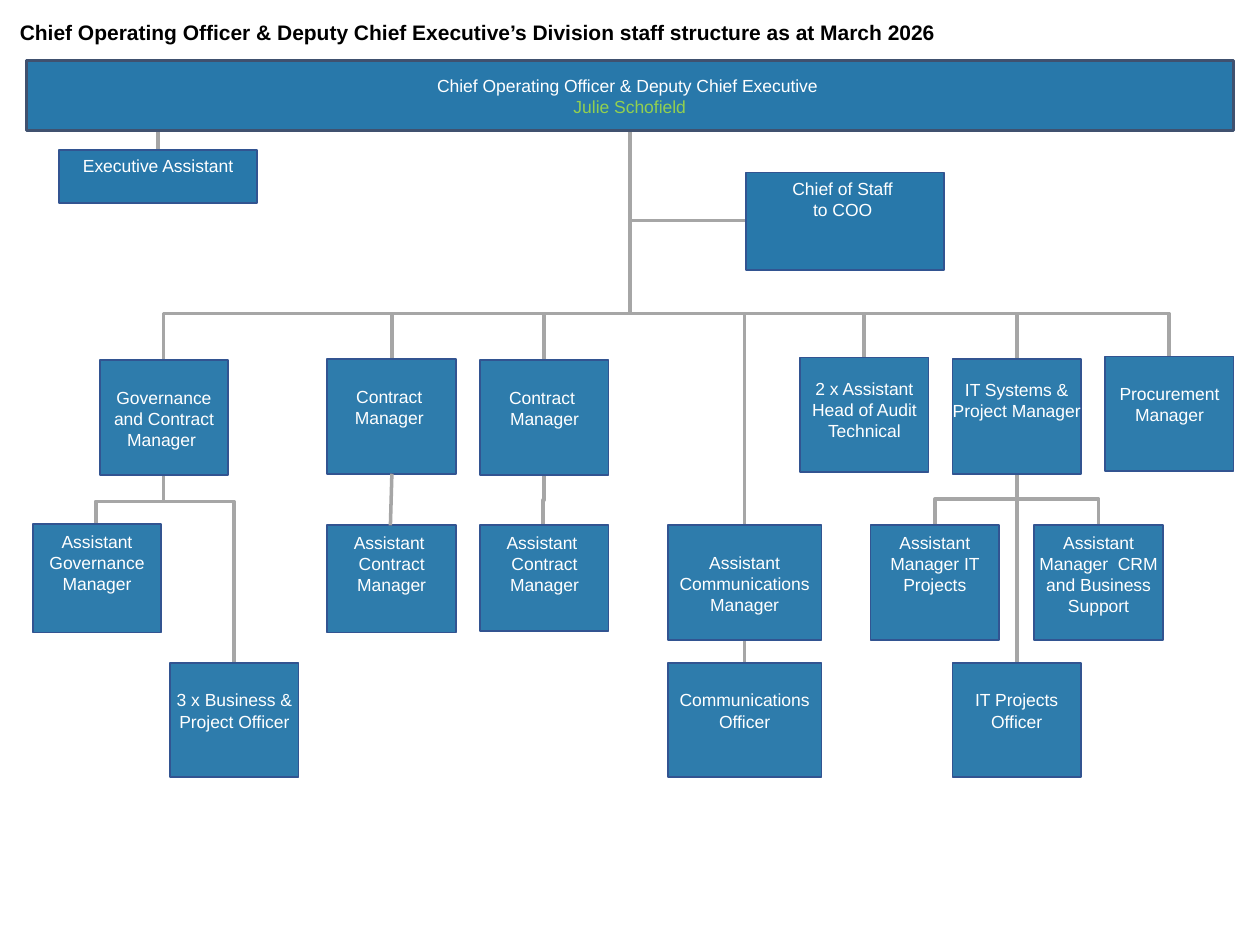
from lxml import etree
from pptx import Presentation, util as u
from pptx.dml.color import RGBColor
from pptx.enum import shapes, text
from pptx.oxml.ns import qn

BLUE = RGBColor(0x28, 0x78, 0xAA)
BOX_EDGE = RGBColor(0x32, 0x54, 0x91)
HEADER_EDGE = RGBColor(0x40, 0x51, 0x6F)
GREY = RGBColor(0xA6, 0xA6, 0xA6)
ASSISTANT_GREY = RGBColor(0xA5, 0xA5, 0xA5)
WHITE = RGBColor(0xFF, 0xFF, 0xFF)
BLACK = RGBColor(0, 0, 0)
GREEN = RGBColor(0x92, 0xD0, 0x50)

LINE_HEIGHT = 0.41
POST_W, POST_H = 2.59, 2.31
COMMS_W = 3.1
TOP = text.MSO_ANCHOR.TOP
MIDDLE = text.MSO_ANCHOR.MIDDLE


class OrgChart:
    font = "Arial"
    size = 10

    def __init__(self, slide):
        self.slide = slide

    def label(self, frame, wording, color, size, align, bold=False):
        frame.word_wrap = True
        frame.text = wording
        for paragraph in frame.paragraphs:
            paragraph.alignment = align
            for run in paragraph.runs:
                run.font.name = self.font
                run.font.size = u.Pt(size)
                run.font.bold = bold
                run.font.color.rgb = color

    def title(self, wording, left, top, width, height):
        heading = self.slide.shapes.add_textbox(*map(u.Cm, (left, top, width, height)))
        frame = heading.text_frame
        self.label(frame, wording, BLACK, 12, text.PP_ALIGN.LEFT, bold=True)
        frame.vertical_anchor = MIDDLE
        frame.paragraphs[0].line_spacing = 0.9

    def box(self, wording, left, top, width, height, inset=(0.25, 0.13), lead=0,
            edge=BOX_EDGE, weight=1, anchor=TOP, opacity=None):
        post = self.slide.shapes.add_shape(
            shapes.MSO_SHAPE.RECTANGLE, *map(u.Cm, (left, top, width, height)))
        post.shadow.inherit = False
        post.fill.solid()
        post.fill.fore_color.rgb = BLUE
        if opacity:
            color = post._element.spPr.find(qn("a:solidFill"))[0]
            etree.SubElement(color, qn("a:alpha"), val=str(opacity * 1000))
        post.line.color.rgb = edge
        post.line.width = u.Pt(weight)
        frame = post.text_frame
        frame.margin_left = frame.margin_right = u.Cm(inset[0])
        frame.margin_top = u.Cm(inset[1] + lead * LINE_HEIGHT)
        frame.margin_bottom = u.Cm(inset[1])
        frame.vertical_anchor = anchor
        self.label(frame, wording, WHITE, self.size, text.PP_ALIGN.CENTER)
        return post

    def post(self, wording, left, top, width=POST_W, height=POST_H,
             inset=(0.05, 0.13), lead=0):
        return self.box(wording, left, top, width, height, inset, lead, opacity=97)

    def connector(self, kind, start, end, color=GREY, weight=2):
        link = self.slide.shapes.add_connector(kind, *map(u.Cm, (*start, *end)))
        link.line.color.rgb = color
        link.line.width = u.Pt(weight)
        etree.SubElement(link._element.spPr, qn("a:effectLst"))
        return link

    def line(self, start, end, color=GREY, weight=2):
        self.connector(shapes.MSO_CONNECTOR.STRAIGHT, start, end, color, weight)

    def branch(self, start, end, turn=None):
        (x1, y1), (x2, y2) = start, end
        middle_x, middle_y = (x1 + x2) / 2, (y1 + y2) / 2
        half_w, half_h = (y2 - y1) / 2, abs(x2 - x1) / 2
        side = 1 if x2 > x1 else -1
        link = self.connector(
            shapes.MSO_CONNECTOR.ELBOW,
            (middle_x + side * half_w, middle_y - half_h),
            (middle_x - side * half_w, middle_y + half_h))
        properties = link._element.spPr
        properties.find(qn("a:xfrm")).set("rot", str((270 if side > 0 else 90) * 60000))
        geometry = properties.find(qn("a:prstGeom"))
        if turn is None:
            geometry.set("prst", "bentConnector2")
            return
        guides = geometry.find(qn("a:avLst"))
        if guides is None:
            guides = etree.SubElement(geometry, qn("a:avLst"))
        share = round((turn - y1) / (y2 - y1) * 100000)
        etree.SubElement(guides, qn("a:gd"), name="adj1", fmla=f"val {share}")


def main():
    deck = Presentation()
    deck.slide_width, deck.slide_height = u.Cm(25.4), u.Cm(19.05)
    chart = OrgChart(deck.slides.add_slide(deck.slide_layouts[6]))

    chief = (12.7, 2.64)
    governance, contract, systems = (3.3, 9.58), (10.97, 9.58), (20.5, 9.55)

    chart.line(systems, (20.5, 13.36))
    chart.line((15.01, 12.9), (15.01, 13.36))
    for report in ((20.5, 7.24), (17.42, 7.21), (15.01, 10.59), (3.3, 7.26),
                   (7.9, 7.24), (10.97, 7.26), (23.57, 7.19)):
        chart.branch(chief, report, turn=6.32)
    chart.branch(chief, (15.04, 4.45))
    for manager, turn, reports in (
            (governance, 10.11, ((1.93, 10.57), (4.72, 13.36))),
            (contract, 10.08, ((10.95, 10.59),)),
            (systems, 10.06, ((18.85, 10.59), (22.15, 10.59)))):
        for report in reports:
            chart.branch(manager, report, turn)

    chart.title("Chief Operating Officer & Deputy Chief Executive’s Division "
                "staff structure as at March 2026", 0.15, 0.3, 20.12, 0.74)
    chart.line((3.18, 2.64), (3.18, 3.02), ASSISTANT_GREY, 2.25)

    header = chart.box("Chief Operating Officer & Deputy Chief Executive \nJulie Schofield",
                       0.53, 1.22, 24.33, 1.42, edge=HEADER_EDGE, weight=1.75, anchor=MIDDLE)
    header.text_frame.paragraphs[1].runs[0].font.color.rgb = GREEN
    chart.box("Executive Assistant", 1.19, 3.02, 3.99, 1.07, (0.1, 0.1))
    chart.box("Chief of Staff \nto COO ", 15.04, 3.48, 3.99, 1.96, (0.1, 0.1))

    for wording, left, top in (
            ("Governance and Contract Manager ", 2.01, 7.26),
            ("Contract \nManager ", 6.6, 7.24),
            ("Contract \nManager", 9.68, 7.26),
            ("Procurement Manager", 22.28, 7.19),
            ("3 x Business & Project Officer", 3.43, 13.36),
            ("IT Projects Officer", 19.2, 13.36)):
        chart.post(wording, left, top, lead=1)
    for wording, left, top in (
            ("2 x Assistant Head of Audit Technical", 16.13, 7.21),
            ("IT Systems & Project Manager", 19.2, 7.24)):
        chart.post(wording, left, top, inset=(0, 0), lead=1)
    for wording, left, top, height in (
            ("Assistant Governance\nManager", 0.66, 10.57, 2.18),
            ("Assistant \nContract Manager", 6.6, 10.59, 2.16),
            ("Assistant \nContract Manager", 9.68, 10.59, 2.13),
            ("Assistant Manager IT Projects", 17.55, 10.59, POST_H),
            ("Assistant Manager  CRM and Business Support", 20.85, 10.59, POST_H)):
        chart.post(wording, left, top, height=height)
    for wording, top in (("Assistant Communications Manager", 10.59),
                         ("Communications Officer", 13.36)):
        chart.post(wording, 13.46, top, width=COMMS_W, inset=(0, 0.13), lead=1)

    chart.line((7.9, 9.55), (7.87, 10.59))
    deck.save("out.pptx")


if __name__ == "__main__":
    main()
